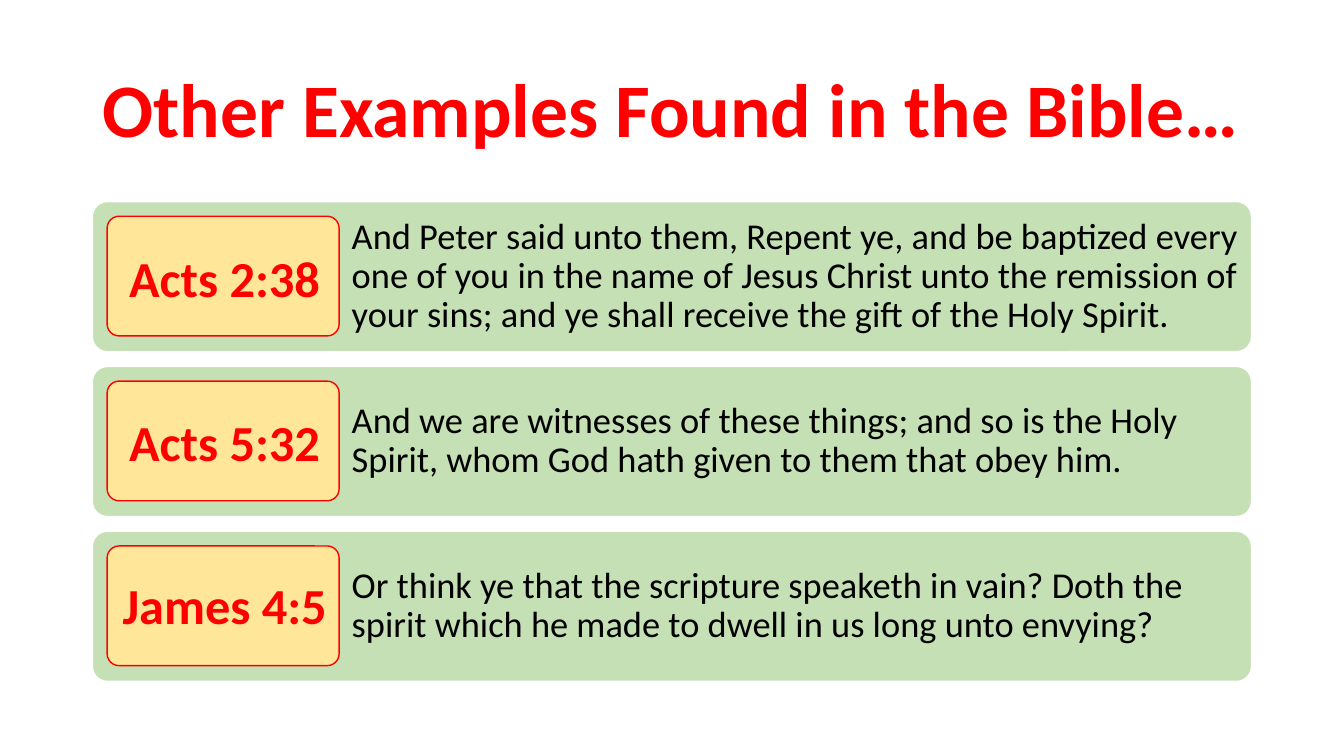
from dataclasses import dataclass

from pptx import Presentation
from pptx.dml.color import RGBColor
from pptx.enum.shapes import MSO_SHAPE as Preset
from pptx.enum.text import MSO_ANCHOR as Anchor, MSO_AUTO_SIZE as AutoSize, PP_ALIGN as Align
from pptx.util import Emu, Pt


@dataclass(frozen=True)
class Theme:
    font: str = "Calibri"
    red: RGBColor = RGBColor(0xFF, 0x00, 0x00)
    black: RGBColor = RGBColor(0x00, 0x00, 0x00)
    white: RGBColor = RGBColor(0xFF, 0xFF, 0xFF)
    green: RGBColor = RGBColor(0xC5, 0xE0, 0xB4)
    yellow: RGBColor = RGBColor(0xFF, 0xE6, 0x99)
    title_size: int = 54
    reference_size: int = 36
    verse_size: int = 26


theme = Theme()
PX = 9525  # EMU per px, 96 px to the inch

verses = [
    ("Acts 2:38", "And Peter said unto them, Repent ye, and be baptized every one of you "
                  "in the name of Jesus Christ unto the remission of your sins; and ye "
                  "shall receive the gift of the Holy Spirit."),
    ("Acts 5:32", "And we are witnesses of these things; and so is the Holy Spirit, "
                  "whom God hath given to them that obey him."),
    ("James 4:5", "Or think ye that the scripture speaketh in vain? Doth the spirit "
                  "which he made to dwell in us long unto envying?"),
]

presentation = Presentation()
presentation.slide_width, presentation.slide_height = Emu(1280 * PX), Emu(720 * PX)
slide = presentation.slides.add_slide(presentation.slide_layouts[5])


def add_card(left, top, width, height, fill, line):
    card = slide.shapes.add_shape(Preset.ROUNDED_RECTANGLE,
                                  *(Emu(n * PX) for n in (left, top, width, height)))
    card.adjustments[0] = 0.1
    card.shadow.inherit = False
    card.fill.solid()
    card.fill.fore_color.rgb = fill
    card.line.color.rgb = line
    card.line.width = Pt(1)


def write(shape, text, size, color, align, bold=False, spacing=1.0):
    shape.text_frame.vertical_anchor = Anchor.MIDDLE
    paragraph = shape.text_frame.paragraphs[0]
    paragraph.alignment = align
    paragraph.line_spacing = spacing
    run = paragraph.add_run()
    run.text = text
    run.font.name, run.font.size, run.font.bold = theme.font, Pt(size), bold
    run.font.color.rgb = color


# Title
title = slide.shapes.title
title.left, title.top, title.width, title.height = (Emu(n * PX) for n in (88, 38, 1104, 139))
write(title, "Other Examples Found in the Bible…", theme.title_size, theme.red,
      Align.LEFT, bold=True, spacing=0.9)

# Verse rows: green band, verse text, yellow card
for row, (reference, verse) in enumerate(verses):
    top = 192 + 157 * row
    add_card(88, top, 1104, 143, theme.green, theme.white)

    verse_box = slide.shapes.add_textbox(*(Emu(n * PX) for n in (324, top, 868, 143)))
    frame = verse_box.text_frame
    frame.word_wrap = True
    frame.margin_left = frame.margin_right = Emu(11 * PX)
    frame.margin_top = frame.margin_bottom = Emu(11 * PX)
    write(verse_box, verse, theme.verse_size, theme.black, Align.LEFT, spacing=0.9)

    add_card(102, top + 14, 221, 114, theme.yellow, theme.red)

# References, set on the yellow cards
for row, (reference, verse) in enumerate(verses):
    label = slide.shapes.add_textbox(*(Emu(n * PX) for n in (106, 230 + 156 * row, 216, 68)))
    label.text_frame.word_wrap = False
    label.text_frame.auto_size = AutoSize.SHAPE_TO_FIT_TEXT
    write(label, reference, theme.reference_size, theme.red, Align.CENTER, bold=True)

presentation.save("out.pptx")
